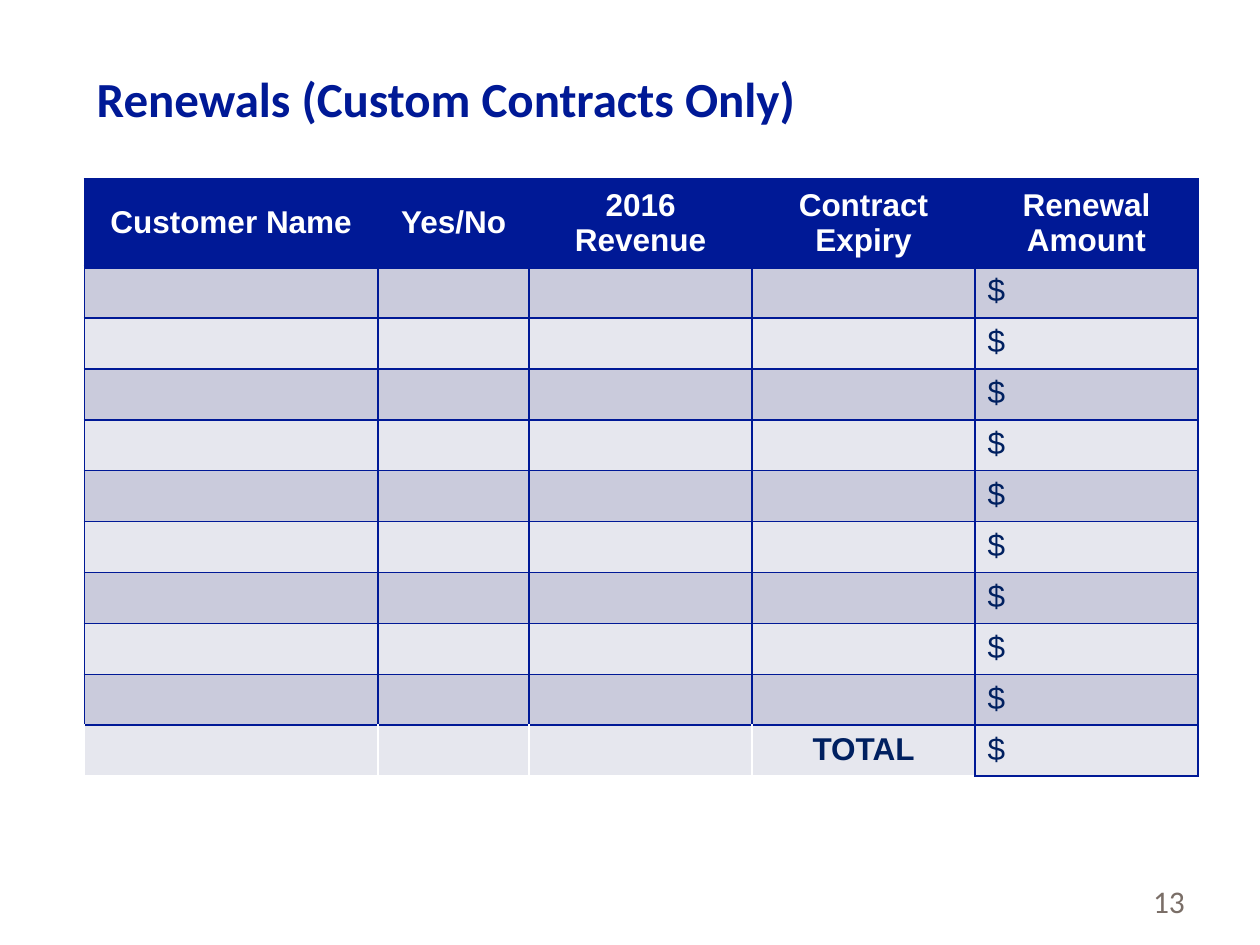
from lxml import etree
from pptx import Presentation
from pptx.dml.color import RGBColor
from pptx.enum import text
from pptx.oxml import ns
from pptx.util import Pt

COLORS = {
    "navy": "001996",
    "ink": "002060",
    "white": "FFFFFF",
    "dark_band": "CACBDC",
    "light_band": "E6E7EE",
    "grey": "7A6E67",
}
HEADINGS = ["Customer Name", "Yes/No", "2016 Revenue", "Contract Expiry", "Renewal Amount"]
COLUMN_WIDTHS = [167.8, 86.4, 127.4, 127.4, 127.4]
HEADER_HEIGHT, ROW_HEIGHT = 48, 29.1
TOTAL_ROW = 10
LAST_COLUMN = len(HEADINGS) - 1


def write(frame, words, font, size, color, bold=False, align=text.PP_ALIGN.LEFT):
    frame.text = words
    paragraph = frame.paragraphs[0]
    paragraph.alignment = align
    for run in paragraph.runs:
        run.font.name = font
        run.font.size = Pt(size)
        run.font.bold = bold
        run.font.color.rgb = RGBColor.from_string(COLORS[color])


def set_borders(cell, edges):
    """Draw cell edges from (side, color, width) tuples in the order L, R, T, B."""
    properties = cell._tc.get_or_add_tcPr()
    for position, (side, color, width) in enumerate(edges):
        line = etree.Element(ns.qn(f"a:ln{side}"), w=str(Pt(width)))
        fill = etree.SubElement(line, ns.qn("a:solidFill"))
        etree.SubElement(fill, ns.qn("a:srgbClr"), val=COLORS[color])
        properties.insert(position, line)


deck = Presentation()
deck.slide_width, deck.slide_height = Pt(720), Pt(540)
slide = deck.slides.add_slide(deck.slide_layouts[6])

title = slide.shapes.add_textbox(Pt(41.8), Pt(21.6), Pt(648), Pt(68.4)).text_frame
title.word_wrap = True
title.vertical_anchor = text.MSO_ANCHOR.MIDDLE
title.margin_left = Pt(13.5)
write(title, "Renewals (Custom Contracts Only)", "Calibri", 28, "navy", bold=True)

renewals = slide.shapes.add_table(
    TOTAL_ROW + 1, len(HEADINGS), Pt(48.2), Pt(102.2),
    Pt(sum(COLUMN_WIDTHS)), Pt(HEADER_HEIGHT + TOTAL_ROW * ROW_HEIGHT),
).table
for column, width in zip(renewals.columns, COLUMN_WIDTHS):
    column.width = Pt(width)

for r, row in enumerate(renewals.rows):
    row.height = Pt(ROW_HEIGHT if r else HEADER_HEIGHT)
    band = "navy" if r == 0 else "dark_band" if r % 2 else "light_band"
    for c, cell in enumerate(row.cells):
        cell.fill.solid()
        cell.fill.fore_color.rgb = RGBColor.from_string(COLORS[band])

        if r == 0:
            cell.vertical_anchor = text.MSO_ANCHOR.MIDDLE
            write(cell.text_frame, HEADINGS[c], "Arial", 18, "white", True, text.PP_ALIGN.CENTER)
        elif c == LAST_COLUMN:
            write(cell.text_frame, "$", "Arial", 18, "ink")
        elif r == TOTAL_ROW and c == LAST_COLUMN - 1:
            write(cell.text_frame, "TOTAL", "Arial", 18, "ink", True, text.PP_ALIGN.CENTER)

        # Only the amount in the total row keeps a full navy frame.
        open_cell = r == TOTAL_ROW and c < LAST_COLUMN
        left = "white" if open_cell else "navy"
        right = "white" if open_cell and c < LAST_COLUMN - 1 else "navy"
        bottom = "white" if open_cell else "navy"
        set_borders(cell, [
            ("L", left, 1),
            ("R", right, 1),
            ("T", "navy", 3 if r == 1 else 1),
            ("B", bottom, 3 if r == 0 else 1),
        ])

page_number = slide.shapes.add_textbox(Pt(516.2), Pt(500.4), Pt(168), Pt(28.8)).text_frame
page_number.word_wrap = True
page_number.vertical_anchor = text.MSO_ANCHOR.MIDDLE
write(page_number, "13", "Calibri", 18, "grey", align=text.PP_ALIGN.RIGHT)

deck.save("out.pptx")
